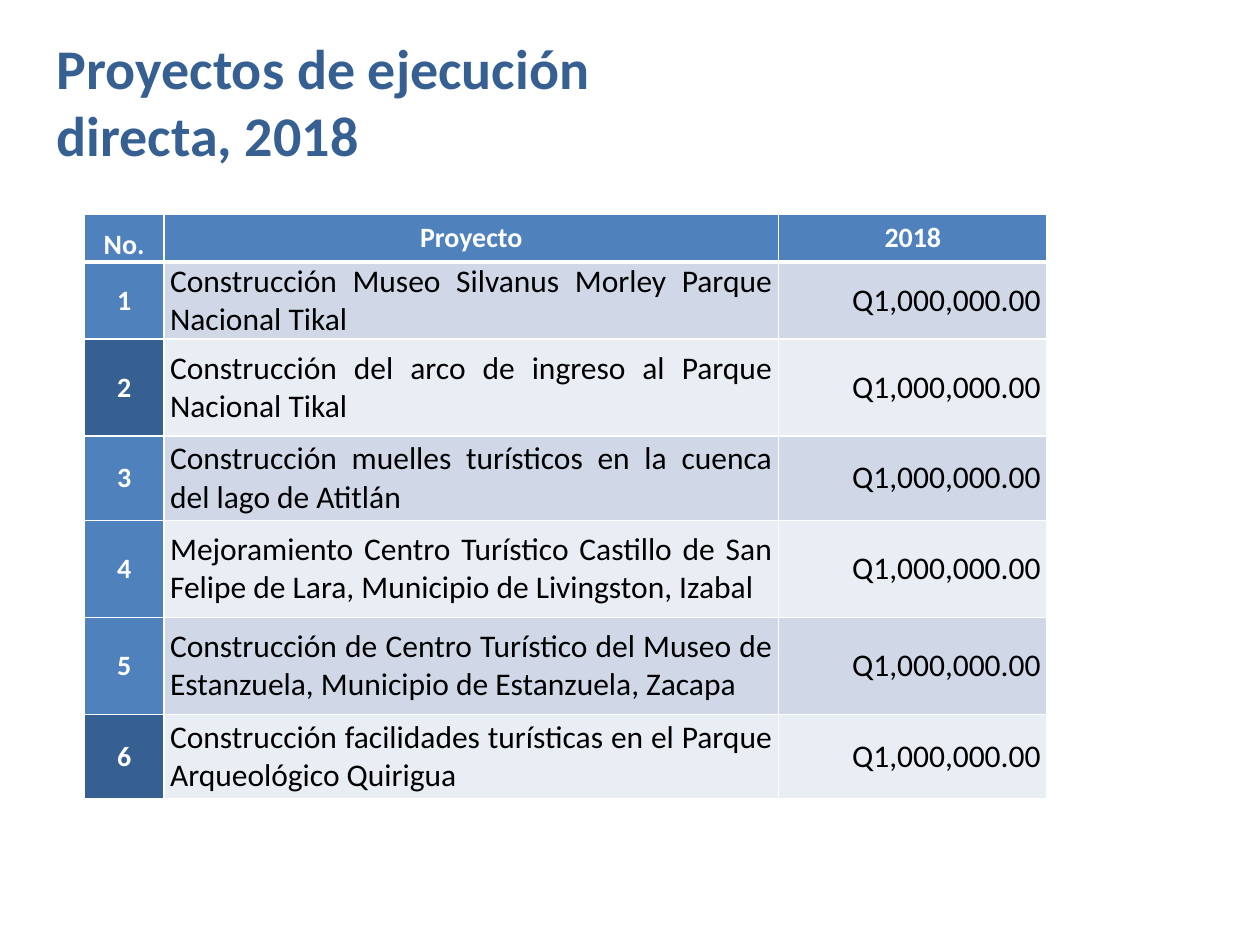
from dataclasses import dataclass

from lxml import etree
from pptx import Presentation
from pptx.dml.color import RGBColor
from pptx.enum import text as t
from pptx.oxml.ns import qn
from pptx.util import Inches, Pt

BLUE, DARK_BLUE, WHITE, BLACK = "4F81BD", "376092", "FFFFFF", "000000"
BANDS = ("D0D8E8", "E9EDF4")
AMOUNT = "Q1,000,000.00"
COLUMN_WIDTHS = (0.63, 4.88, 2.13)
HEADER_HEIGHT = 0.38


@dataclass
class Project:
    name: str
    height: float
    number_fill: str = BLUE


@dataclass
class CellStyle:
    align: t.PP_ALIGN
    size: int = 16
    bold: bool = True
    color: str = WHITE
    anchor: t.MSO_ANCHOR = t.MSO_ANCHOR.MIDDLE
    bottom_line: float = 1


HEADINGS = ("No.", "Proyecto", "2018")
PROJECTS = (
    Project("Construcción Museo Silvanus Morley Parque Nacional Tikal", 0.6),
    Project("Construcción del arco de ingreso al Parque Nacional Tikal", 0.77, DARK_BLUE),
    Project("Construcción muelles turísticos en la cuenca del lago de Atitlán", 0.67),
    Project("Mejoramiento Centro Turístico Castillo de San Felipe de Lara, "
            "Municipio de Livingston, Izabal", 0.77),
    Project("Construcción de Centro Turístico del Museo de Estanzuela, "
            "Municipio de Estanzuela, Zacapa", 0.77),
    Project("Construcción facilidades turísticas en el Parque Arqueológico Quirigua",
            0.67, DARK_BLUE),
)
NUMBER = CellStyle(t.PP_ALIGN.CENTER)
HEADER = CellStyle(t.PP_ALIGN.CENTER, bottom_line=3)
NUMBER_HEADER = CellStyle(t.PP_ALIGN.CENTER, anchor=t.MSO_ANCHOR.BOTTOM, bottom_line=3)
NAME = CellStyle(t.PP_ALIGN.JUSTIFY, 18, False, BLACK)
VALUE = CellStyle(t.PP_ALIGN.RIGHT, 18, False, BLACK)


def rgb(color: str) -> RGBColor:
    return RGBColor.from_string(color)


def format_font(font, size: int, bold: bool, color: str) -> None:
    for key, value in {"name": "Calibri", "size": Pt(size), "bold": bold}.items():
        setattr(font, key, value)
    font.color.rgb = rgb(color)


def add_borders(cell, widths: dict[str, float]) -> None:
    """Put white lines ahead of the cell's fill, as the schema orders them."""
    properties = cell._tc.get_or_add_tcPr()
    for position, (side, width) in enumerate(widths.items()):
        line = etree.Element(qn(f"a:{side}"), w=str(Pt(width)))
        fill = etree.SubElement(line, qn("a:solidFill"))
        etree.SubElement(fill, qn("a:srgbClr"), val=WHITE)
        properties.insert(position, line)


def fill_cell(cell, words: str, fill: str, style: CellStyle, top_line: float = 1) -> None:
    margins = {"margin_left": 0.05, "margin_right": 0.05, "margin_top": 0, "margin_bottom": 0}
    for key, value in margins.items():
        setattr(cell, key, Inches(value))
    cell.vertical_anchor = style.anchor
    cell.fill.solid()
    cell.fill.fore_color.rgb = rgb(fill)
    add_borders(cell, {"lnL": 1, "lnR": 1, "lnT": top_line, "lnB": style.bottom_line})
    paragraph = cell.text_frame.paragraphs[0]
    paragraph.alignment = style.align
    run = paragraph.add_run()
    run.text = words
    format_font(run.font, style.size, style.bold, style.color)


def add_title(slide, words: str) -> None:
    title = slide.shapes.title
    for key, value in {"left": 0.35, "top": 0.14, "width": 5.21, "height": 1.32}.items():
        setattr(title, key, Inches(value))
    title.text_frame.vertical_anchor = t.MSO_ANCHOR.MIDDLE
    paragraph = title.text_frame.paragraphs[0]
    paragraph.alignment = t.PP_ALIGN.LEFT
    run = paragraph.add_run()
    run.text = words
    format_font(run.font, 32, True, DARK_BLUE)


def add_projects(slide) -> None:
    heights = [HEADER_HEIGHT] + [project.height for project in PROJECTS]
    table = slide.shapes.add_table(
        len(heights), len(COLUMN_WIDTHS), Inches(0.67), Inches(1.7),
        Inches(sum(COLUMN_WIDTHS)), Inches(sum(heights))).table
    for column, width in zip(table.columns, COLUMN_WIDTHS):
        column.width = Inches(width)
    for row, height in zip(table.rows, heights):
        row.height = Inches(height)

    for column, heading in enumerate(HEADINGS):
        fill_cell(table.cell(0, column), heading, BLUE, HEADER if column else NUMBER_HEADER)
    for number, project in enumerate(PROJECTS, start=1):
        band = BANDS[(number - 1) % 2]
        top_line = HEADER.bottom_line if number == 1 else 1
        contents = ((str(number), project.number_fill, NUMBER),
                    (project.name, band, NAME), (AMOUNT, band, VALUE))
        for column, (words, fill, style) in enumerate(contents):
            fill_cell(table.cell(number, column), words, fill, style, top_line)


def main() -> None:
    deck = Presentation()
    deck.slide_width, deck.slide_height = Inches(10), Inches(7.5)
    slide = deck.slides.add_slide(deck.slide_layouts[5])
    add_title(slide, "Proyectos de ejecución directa, 2018")
    add_projects(slide)
    deck.save("out.pptx")


if __name__ == "__main__":
    main()
